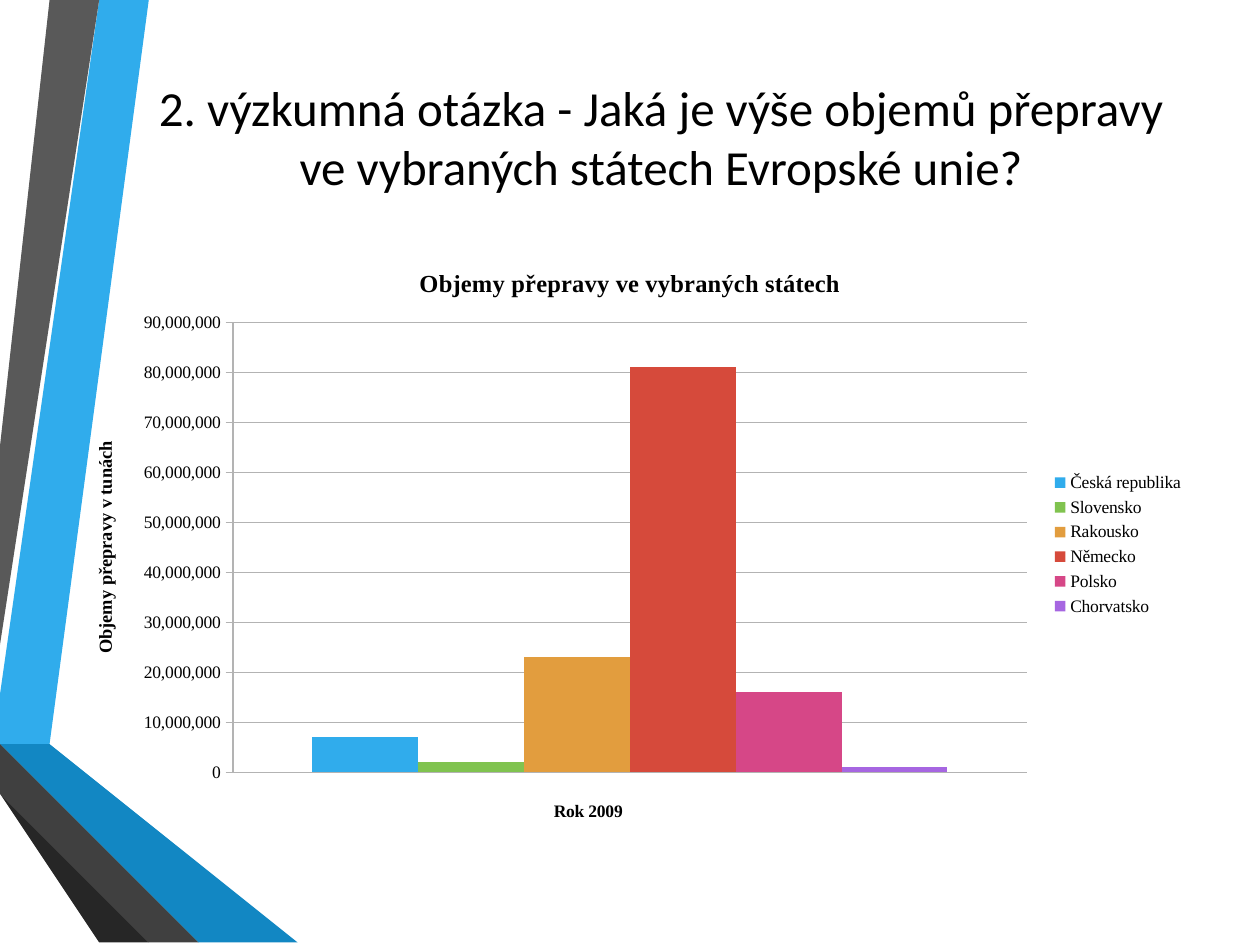
from lxml import etree
from pptx import Presentation
from pptx.chart.data import CategoryChartData
from pptx.dml.color import RGBColor
from pptx.enum.chart import XL_CHART_TYPE, XL_LEGEND_POSITION, XL_TICK_LABEL_POSITION, XL_TICK_MARK
from pptx.enum.text import MSO_ANCHOR, PP_ALIGN
from pptx.oxml import parse_xml
from pptx.util import Cm, Pt

CLUSTERED = XL_CHART_TYPE.COLUMN_CLUSTERED
RIGHT = XL_LEGEND_POSITION.RIGHT
LOW = XL_TICK_LABEL_POSITION.LOW
OUTSIDE, NO_TICK = XL_TICK_MARK.OUTSIDE, XL_TICK_MARK.NONE
MIDDLE, CENTER = MSO_ANCHOR.MIDDLE, PP_ALIGN.CENTER
CHART_NS = "http://schemas.openxmlformats.org/drawingml/2006/chart"
SERIF = "Times New Roman"
BLACK, GRAY = "000000", "B3B3B3"

HEADING = "2. výzkumná otázka - Jaká je výše objemů přepravy ve vybraných státech Evropské unie?"
CHART_TITLE = "Objemy přepravy ve vybraných státech"
VOLUME_TITLE = "Objemy přepravy v tunách"
YEAR_TITLE = "Rok 2009"
COUNTRIES = [
    ("Česká republika", 7000000, "30ACEC"),
    ("Slovensko", 2000000, "80C34F"),
    ("Rakousko", 23000000, "E29D3E"),
    ("Německo", 81000000, "D64A3B"),
    ("Polsko", 16000000, "D64787"),
    ("Chorvatsko", 1000000, "A666E1"),
]
RIBBONS = [
    ("30ACEC", [(0, 13.82), (0, 14.61), (0.56, 14.71), (2.97, 0), (2.26, 0)]),
    ("595959", [(2.11, 0), (1.4, 0), (0, 8.53), (0, 12.85)]),
    ("262626", [(0, 15.72), (0, 15.77), (2.36, 19.05), (2.51, 19.05)]),
    ("0C5A82", [(0, 14.71), (0, 14.73), (3.96, 19.05), (4.14, 19.05)]),
    ("1287C3", [(0, 14.71), (4.14, 19.05), (5.92, 19.05), (0.56, 14.71), (0, 14.61)]),
    ("404040", [(0, 15.72), (2.51, 19.05), (3.84, 19.05), (0, 14.88)]),
]


def color(value):
    return RGBColor.from_string(value)


def style(font, name, size, bold=False):
    font.name = name
    font.size = Pt(size)
    font.bold = bold
    font.color.rgb = color(BLACK)


def add_ribbon(slide, fill, points):
    builder = slide.shapes.build_freeform(*points[0], scale=Cm(1))
    builder.add_line_segments(points[1:], close=True)
    ribbon = builder.convert_to_shape()
    ribbon.shadow.inherit = False
    ribbon.fill.solid()
    ribbon.fill.fore_color.rgb = color(fill)
    ribbon.line.fill.background()


def add_heading(slide):
    heading = slide.shapes.add_textbox(Cm(2.49), Cm(0.53), Cm(21.67), Cm(4.45))
    frame = heading.text_frame
    frame.word_wrap = True
    frame.vertical_anchor = MIDDLE
    frame.text = HEADING
    frame.paragraphs[0].alignment = CENTER
    style(frame.paragraphs[0].runs[0].font, "Calibri", 28)


def set_title(owner, text, size):
    frame = (owner.chart_title if hasattr(owner, "chart_title") else owner.axis_title).text_frame
    frame.text = text
    style(frame.paragraphs[0].runs[0].font, SERIF, size, True)


def place(element, inner=False, **fractions):
    for old in element.findall(f"{{{CHART_NS}}}layout"):
        element.remove(old)
    layout = parse_xml(f'<c:layout xmlns:c="{CHART_NS}"><c:manualLayout/></c:layout>')
    settings = [("layoutTarget", "inner")] if inner else []
    settings += [("xMode", "edge"), ("yMode", "edge")] + list(fractions.items())
    for tag, value in settings:
        etree.SubElement(layout[0], f"{{{CHART_NS}}}{tag}").set("val", str(value))
    text = element.find(f"{{{CHART_NS}}}tx")
    if text is None:
        element.insert(0, layout)
    else:
        text.addnext(layout)


def add_volume_chart(slide):
    volumes = CategoryChartData(number_format="#,##0")
    volumes.categories = ["1"]
    for country, volume, _ in COUNTRIES:
        volumes.add_series(country, [volume])
    chart = slide.shapes.add_chart(
        CLUSTERED, Cm(1.27), Cm(4.93), Cm(22.86), Cm(12.09), volumes).chart
    style(chart.font, SERIF, 10)
    set_title(chart, CHART_TITLE, 14)

    plot = chart.plots[0]
    plot.gap_width = 150
    plot.overlap = 0
    plot.vary_by_categories = False
    for series, (_, _, fill) in zip(plot.series, COUNTRIES):
        series.format.fill.solid()
        series.format.fill.fore_color.rgb = color(fill)

    year_axis, volume_axis = chart.category_axis, chart.value_axis
    set_title(year_axis, YEAR_TITLE, 10)
    year_axis.visible = False
    year_axis.tick_label_position = LOW
    set_title(volume_axis, VOLUME_TITLE, 10.5)
    volume_axis.minimum_scale = 0
    volume_axis.maximum_scale = 90000000
    volume_axis.major_unit = 10000000
    volume_axis.major_tick_mark = OUTSIDE
    volume_axis.minor_tick_mark = NO_TICK
    volume_axis.tick_labels.number_format = "#,##0"
    volume_axis.tick_labels.number_format_is_linked = False
    style(volume_axis.tick_labels.font, SERIF, 10)
    for line in (volume_axis.format.line, volume_axis.major_gridlines.format.line):
        line.color.rgb = color(GRAY)
        line.width = Pt(0.75)

    chart.has_legend = True
    chart.legend.position = RIGHT
    chart.legend.include_in_layout = False
    style(chart.legend.font, SERIF, 10)

    plot_area = chart.element.find(f".//{{{CHART_NS}}}plotArea")
    place(plot_area, inner=True, x=0.15, y=0.13, w=0.7, h=0.75)
    place(year_axis.axis_title.element if hasattr(year_axis.axis_title, "element")
          else plot_area.find(f"{{{CHART_NS}}}catAx/{{{CHART_NS}}}title"), x=0.43, y=0.92)


def main():
    presentation = Presentation()
    presentation.slide_width, presentation.slide_height = Cm(25.4), Cm(19.05)
    slide = presentation.slides.add_slide(presentation.slide_layouts[6])
    for fill, points in RIBBONS:
        add_ribbon(slide, fill, points)
    add_heading(slide)
    add_volume_chart(slide)
    presentation.save("out.pptx")


if __name__ == "__main__":
    main()
